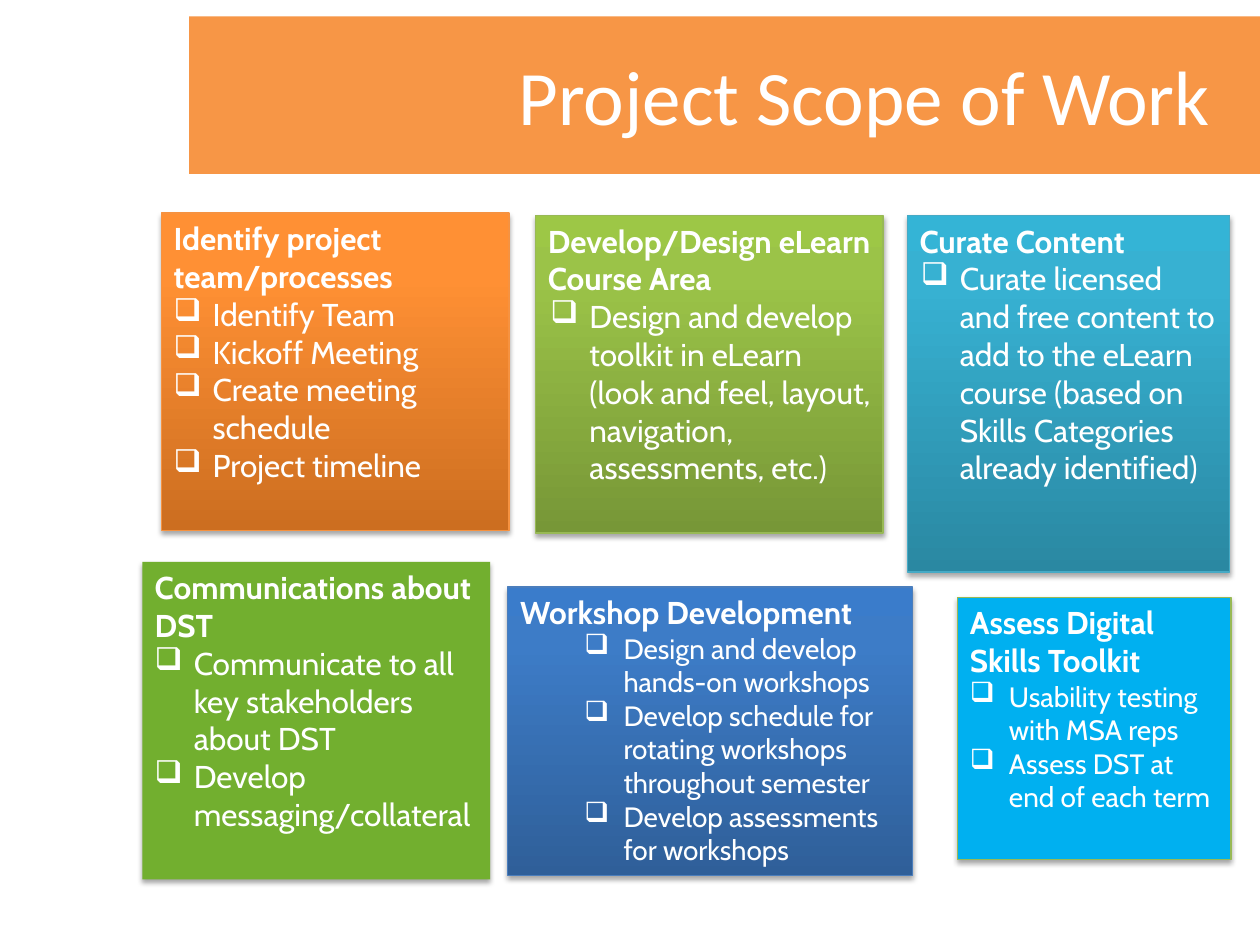
from dataclasses import dataclass

import lxml.etree
import pptx
import pptx.dml.color
import pptx.enum.shapes
import pptx.enum.text
import pptx.oxml.ns
import pptx.shapes.autoshape
import pptx.slide
import pptx.util

Inches = pptx.util.Inches
Pt = pptx.util.Pt
qn = pptx.oxml.ns.qn


@dataclass(frozen=True)
class Theme:
    banner: str = "F79646"
    text: str = "FFFFFF"
    shadow: str = "000000"
    title_font: str = "Calibri"
    card_font: str = "Cabin"
    title_size: int = 44
    heading_size: int = 18
    item_size: int = 18
    small_item_size: int = 16
    orange: tuple[str, ...] = ("CC6E20", "FF9034", "FF9136")
    olive: tuple[str, ...] = ("779737", "9BC348", "9DC746")
    teal: tuple[str, ...] = ("2A88A2", "37B1D2", "34B4D6")
    blue: tuple[str, ...] = ("2F5F99", "3D7CC7", "3A7CCB")
    green: tuple[str, ...] = ("72AF2F",)
    cyan: tuple[str, ...] = ("00B0F0",)
    orange_line: str = "F69240"
    olive_line: str = "98B955"
    teal_line: str = "46AAC5"
    blue_line: str = "4B7EBC"


THEME = Theme()
HANGING = 0.31
STOPS = (0, 80, 100)


@dataclass(frozen=True)
class Card:
    left: float
    top: float
    width: float
    height: float
    fill: tuple[str, ...]
    line: str | None
    heading: str
    items: tuple[str, ...]
    size: int = THEME.item_size
    level: int = 0
    indent: float = HANGING


CARDS = (
    Card(1.28, 1.69, 2.76, 2.52, THEME.orange, THEME.orange_line,
         "Identify project team/processes",
         ("Identify Team", "Kickoff Meeting", "Create meeting schedule", "Project timeline")),
    Card(4.25, 1.71, 2.76, 2.52, THEME.olive, THEME.olive_line,
         "Develop/Design eLearn Course Area",
         ("Design and develop toolkit in eLearn (look and feel, layout, navigation, "
          "assessments, etc.)",), level=1, indent=0.33),
    Card(7.2, 1.71, 2.56, 2.83, THEME.teal, THEME.teal_line,
         "Curate Content",
         ("Curate licensed and free content to add to the eLearn course (based on "
          "Skills Categories already identified)",), level=1, indent=0.32),
    Card(1.13, 4.46, 2.76, 2.52, THEME.green, None,
         "Communications about DST",
         ("Communicate to all key stakeholders about DST", "Develop messaging/collateral")),
    Card(4.03, 4.66, 3.21, 2.29, THEME.blue, THEME.blue_line,
         "Workshop Development",
         ("Design and develop hands-on workshops",
          "Develop schedule for rotating workshops throughout semester",
          "Develop assessments for workshops"),
         size=THEME.small_item_size, level=1, indent=0.82),
    Card(7.6, 4.74, 2.17, 2.08, THEME.cyan, THEME.olive_line,
         "Assess Digital Skills Toolkit",
         ("Usability testing with MSA reps", "Assess DST at end of each term"),
         size=THEME.small_item_size),
)


def rgb(value: str) -> pptx.dml.color.RGBColor:
    return pptx.dml.color.RGBColor.from_string(value)


def add_color(parent: lxml.etree._Element, value: str) -> lxml.etree._Element:
    return lxml.etree.SubElement(parent, qn("a:srgbClr"), val=value)


def paint(s: pptx.shapes.autoshape.Shape, colors: tuple[str, ...]) -> None:
    if len(colors) == 1:
        s.fill.solid()
        s.fill.fore_color.rgb = rgb(colors[0])
        return
    s.fill.gradient()
    s.fill.gradient_angle = 90
    stops = s._element.spPr.find(qn("a:gradFill")).find(qn("a:gsLst"))
    for stop in list(stops):
        stops.remove(stop)
    for position, color in zip(STOPS, colors):
        add_color(lxml.etree.SubElement(stops, qn("a:gs"), pos=str(position * 1000)), color)


def add_shadow(s: pptx.shapes.autoshape.Shape) -> None:
    s.shadow.inherit = False
    effects = s._element.spPr.find(qn("a:effectLst"))
    outer = lxml.etree.SubElement(
        effects, qn("a:outerShdw"), blurRad=str(Pt(3.1)), dist=str(Pt(1.8)),
        dir="5400000", rotWithShape="0")
    lxml.etree.SubElement(add_color(outer, THEME.shadow), qn("a:alpha"), val="35000")


def style(p, font: str, size: int, bold: bool = False) -> None:
    for r in p.runs:
        r.font.name = font
        r.font.size = Pt(size)
        r.font.bold = bold
        r.font.color.rgb = rgb(THEME.text)


def add_bullet(p, indent: float) -> None:
    props = p._p.get_or_add_pPr()
    props.set("marL", str(Inches(indent)))
    props.set("indent", str(Inches(-HANGING)))
    lxml.etree.SubElement(props, qn("a:buChar"), char="❑")


def add_card(slide: pptx.slide.Slide, card: Card) -> None:
    s = slide.shapes.add_shape(
        pptx.enum.shapes.MSO_SHAPE.RECTANGLE, Inches(card.left), Inches(card.top),
        Inches(card.width), Inches(card.height))
    paint(s, card.fill)
    if card.line:
        s.line.color.rgb = rgb(card.line)
        s.line.width = Pt(0.75)
    else:
        s.line.fill.background()
    add_shadow(s)
    tf = s.text_frame
    tf.word_wrap = True
    tf.vertical_anchor = pptx.enum.text.MSO_ANCHOR.TOP
    tf.text = card.heading
    tf.paragraphs[0].alignment = pptx.enum.text.PP_ALIGN.LEFT
    style(tf.paragraphs[0], THEME.card_font, THEME.heading_size, bold=True)
    for item in card.items:
        p = tf.add_paragraph()
        p.text = item
        p.level = card.level
        p.alignment = pptx.enum.text.PP_ALIGN.LEFT
        add_bullet(p, card.indent)
        style(p, THEME.card_font, card.size)


def set_title(slide: pptx.slide.Slide, text: str) -> None:
    s = slide.shapes.title
    s.left, s.top, s.width, s.height = (Inches(v) for v in (1.5, 0.13, 8.5, 1.25))
    paint(s, (THEME.banner,))
    tf = s.text_frame
    tf.text = text
    tf.word_wrap = True
    tf.margin_right = Inches(0.39)
    tf.vertical_anchor = pptx.enum.text.MSO_ANCHOR.MIDDLE
    tf.paragraphs[0].alignment = pptx.enum.text.PP_ALIGN.RIGHT
    style(tf.paragraphs[0], THEME.title_font, THEME.title_size)


def main() -> None:
    prs = pptx.Presentation()
    prs.slide_width, prs.slide_height = Inches(10), Inches(7.5)
    slide = prs.slides.add_slide(prs.slide_layouts.get_by_name("Title Only"))
    set_title(slide, "Project Scope of Work")
    for card in CARDS:
        add_card(slide, card)
    prs.save("out.pptx")


if __name__ == "__main__":
    main()
